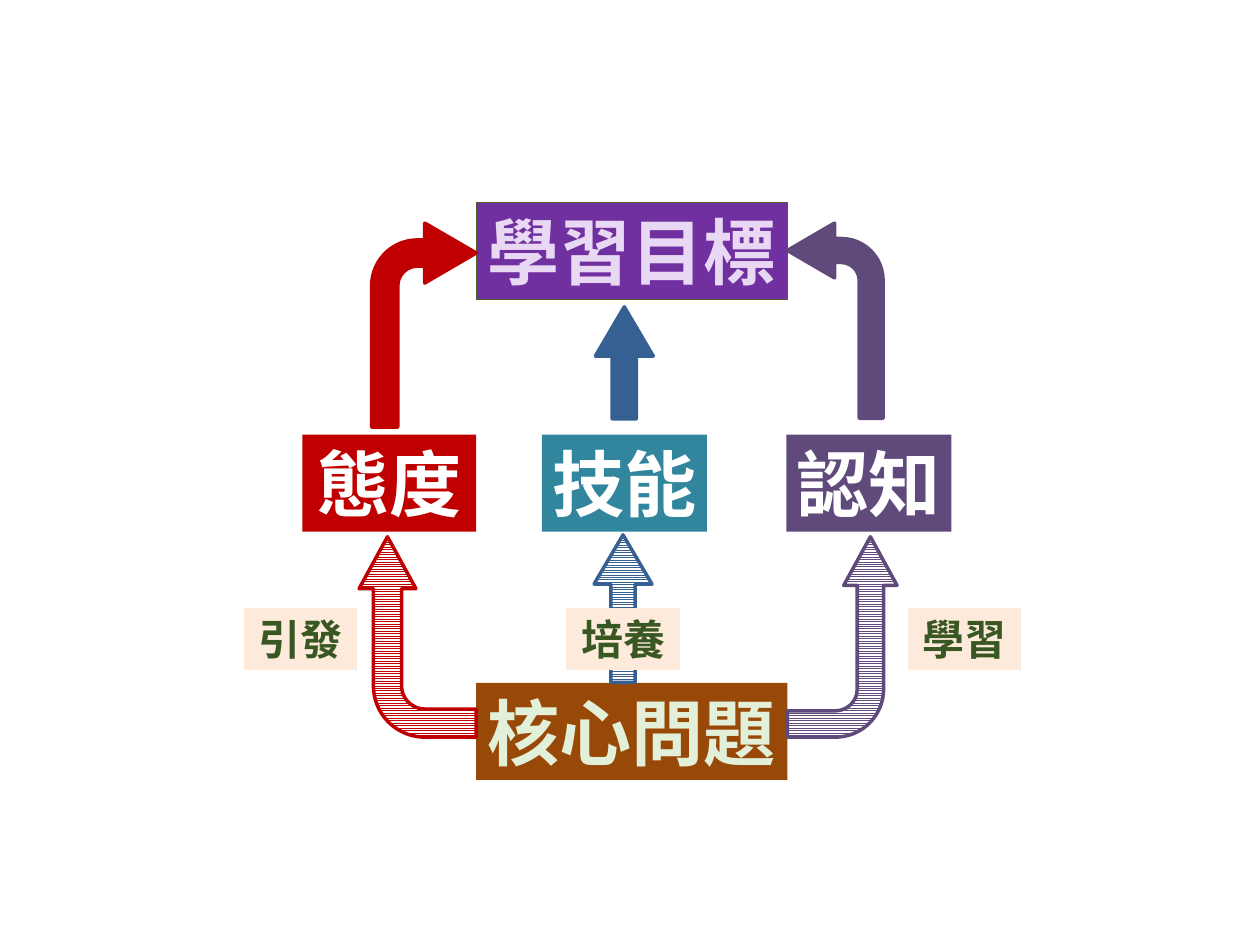
import pptx
import pptx.util
import pptx.dml.color
import pptx.enum.dml
import pptx.enum.shapes
import pptx.enum.text
import pptx.oxml.ns
import lxml.etree

Inches = pptx.util.Inches
Pt = pptx.util.Pt
SHAPE = pptx.enum.shapes.MSO_SHAPE
FONT = "Noto Sans CJK SC"

COLORS = {
    "white": "FFFFFF",
    "attitude": "C00000",
    "skill": "31859C",
    "skill_arrow": "376092",
    "cognition": "604A7B",
    "goal": "7030A0",
    "goal_border": "4F6228",
    "goal_text": "E8D8F4",
    "question": "984807",
    "question_text": "E2F0D9",
    "verb": "FDEADA",
    "verb_text": "385723",
}

BENT_UP = (0.24, 0.243, 0.443, 0.438)
BENT_SIDE = (0.25, 0.287, 0.492, 0.438)
STRAIGHT = (0.421, 0.85)


def rgb(color):
    return pptx.dml.color.RGBColor.from_string(COLORS[color])


def add_block(slide, kind, box, fill, border=None, border_width=0.75):
    block = slide.shapes.add_shape(kind, *(Inches(length) for length in box))
    block.shadow.inherit = False
    block.fill.solid()
    block.fill.fore_color.rgb = rgb(fill)
    if border:
        block.line.color.rgb = rgb(border)
        block.line.width = Pt(border_width)
    else:
        block.line.fill.background()
    return block


def add_label(slide, words, box, fill, text_color, size=41.2, border=None, wrap=False):
    label = add_block(slide, SHAPE.RECTANGLE, box, fill, border)
    frame = label.text_frame
    frame.word_wrap = wrap
    frame.auto_size = pptx.enum.text.MSO_AUTO_SIZE.SHAPE_TO_FIT_TEXT
    frame.vertical_anchor = pptx.enum.text.MSO_ANCHOR.TOP
    frame.margin_left = frame.margin_right = Inches(0.07)
    frame.margin_top = frame.margin_bottom = Inches(0.04)
    paragraph = frame.paragraphs[0]
    paragraph.alignment = pptx.enum.text.PP_ALIGN.CENTER
    run = paragraph.add_run()
    run.text = words
    run.font.size = Pt(size)
    run.font.bold = True
    run.font.color.rgb = rgb(text_color)
    run.font.name = FONT
    east_asian = lxml.etree.SubElement(run.font._element, pptx.oxml.ns.qn("a:ea"))
    east_asian.set("typeface", FONT)


def add_arrow(slide, kind, box, color, adjustments, rotation=0, flipped=False, striped=False):
    arrow = add_block(slide, kind, box, color, color, 2)
    for index, value in enumerate(adjustments):
        arrow.adjustments[index] = value
    arrow.rotation = rotation
    if flipped:
        arrow._element.spPr.xfrm.set("flipH", "1")
    if striped:
        arrow.fill.patterned()
        arrow.fill.pattern = pptx.enum.dml.MSO_PATTERN.NARROW_HORIZONTAL
        arrow.fill.fore_color.rgb = rgb(color)
        arrow.fill.back_color.rgb = rgb("white")
    lxml.etree.SubElement(arrow.line._get_or_add_ln(), pptx.oxml.ns.qn("a:round"))


def main():
    deck = pptx.Presentation()
    deck.slide_width, deck.slide_height = Inches(10), Inches(7.5)
    slide = deck.slides.add_slide(deck.slide_layouts[6])

    for words, left, width, fill in (
        ("態度", 2.4, 1.38, "attitude"),
        ("技能", 4.3, 1.31, "skill"),
        ("認知", 6.24, 1.31, "cognition"),
    ):
        add_label(slide, words, (left, 3.45, width, 0.77), fill, "white")
    add_label(slide, "學習目標", (3.78, 1.61, 2.47, 0.77), "goal", "goal_text",
              border="goal_border")
    add_label(slide, "核心問題", (3.78, 5.42, 2.47, 0.77), "question", "question_text")

    bent, straight = SHAPE.BENT_ARROW, SHAPE.RIGHT_ARROW
    add_arrow(slide, bent, (2.52, 4.59, 1.59, 0.93), "attitude", BENT_UP, 270, striped=True)
    add_arrow(slide, straight, (4.36, 4.6, 1.17, 0.46), "skill_arrow", STRAIGHT, 270, striped=True)
    add_arrow(slide, straight, (4.51, 2.65, 0.89, 0.46), "skill_arrow", STRAIGHT, 270)
    add_arrow(slide, bent, (2.95, 1.77, 0.83, 1.62), "attitude", BENT_SIDE)
    add_arrow(slide, bent, (5.89, 4.62, 1.59, 0.87), "cognition", BENT_UP, 90,
              flipped=True, striped=True)
    add_arrow(slide, bent, (6.25, 1.77, 0.76, 1.55), "cognition", BENT_SIDE, flipped=True)

    for verb, left in (("學習", 7.21), ("培養", 4.5), ("引發", 1.94)):
        add_label(slide, verb, (left, 4.83, 0.89, 0.48), "verb", "verb_text",
                  size=24, border="verb", wrap=True)

    deck.save("out.pptx")


if __name__ == "__main__":
    main()
